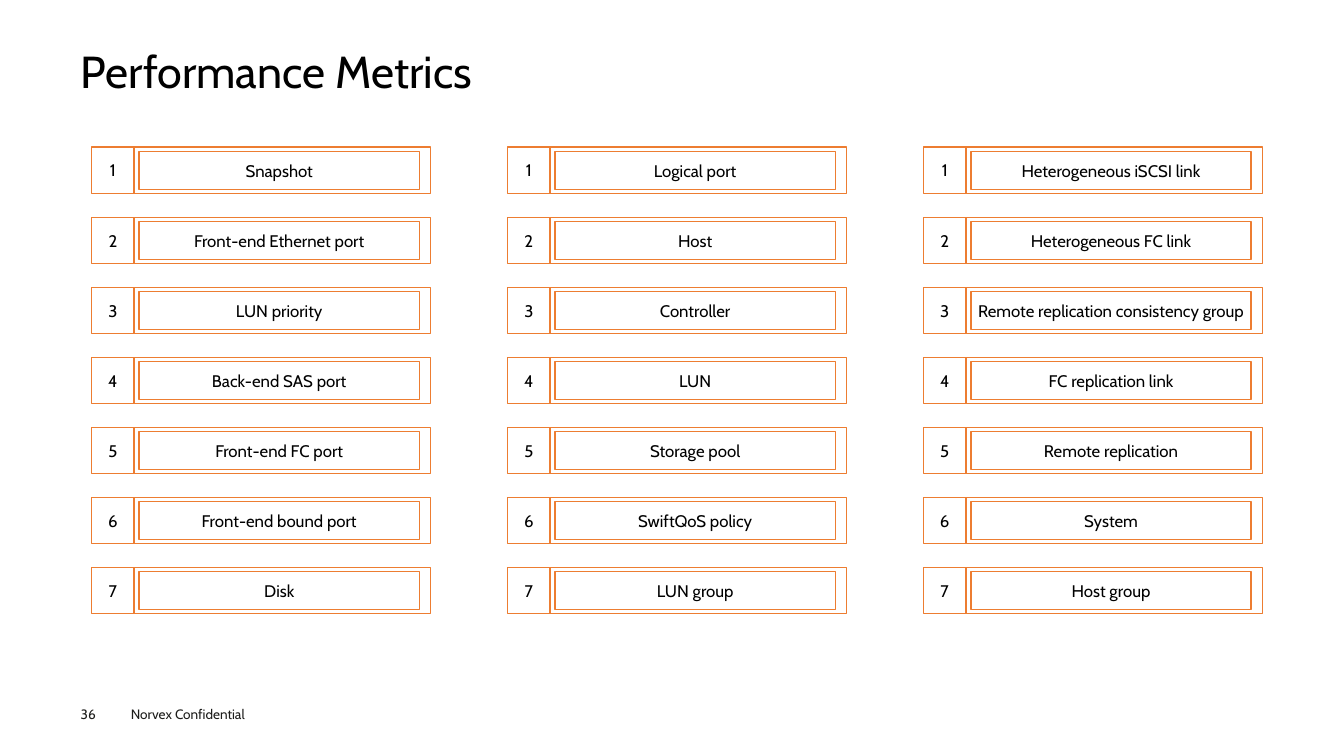
from dataclasses import dataclass

from pptx import Presentation
from pptx import util as u
from pptx.dml import color
from pptx.enum import shapes, text
from pptx.shapes import autoshape, shapetree
from pptx.slide import Slide
from pptx.text import text as text_parts


@dataclass(frozen=True)
class Theme:
    font: str = "Cabin"
    ink: str = "000000"
    footer_ink: str = "1D1D1B"
    surface: str = "FFFFFF"
    accent: str = "ED7D31"
    title_size: float = 32
    metric_size: float = 12
    footer_size: float = 9.7
    line_width: float = 1


@dataclass(frozen=True)
class Box:
    left: float
    top: float
    width: float
    height: float

    def lengths(self) -> tuple[u.Length, ...]:
        return tuple(u.Inches(value) for value in (self.left, self.top, self.width, self.height))


@dataclass(frozen=True)
class Metric:
    name: str
    side_inset: float = 0.1


@dataclass(frozen=True)
class Caption:
    words: str
    box: Box
    size: float
    ink: str
    side_inset: float = 0
    top_inset: float = 0
    line_spacing: float = 1.0


THEME = Theme()

METRIC_COLUMNS: list[list[Metric]] = [
    [
        Metric("Snapshot"),
        Metric("Front-end Ethernet port"),
        Metric("LUN priority"),
        Metric("Back-end SAS port"),
        Metric("Front-end FC port"),
        Metric("Front-end bound port"),
        Metric("Disk"),
    ],
    [
        Metric("Logical port"),
        Metric("Host"),
        Metric("Controller"),
        Metric("LUN"),
        Metric("Storage pool"),
        Metric("SwiftQoS policy"),
        Metric("LUN group"),
    ],
    [
        Metric("Heterogeneous iSCSI link"),
        Metric("Heterogeneous FC link"),
        Metric("Remote replication consistency group", side_inset=0),
        Metric("FC replication link"),
        Metric("Remote replication"),
        Metric("System"),
        Metric("Host group"),
    ],
]

CAPTIONS: list[Caption] = [
    Caption("Norvex Confidential", Box(1.2, 6.95, 1.6, 0.27), THEME.footer_size,
            THEME.footer_ink, side_inset=0.1, top_inset=0.05),
    Caption("36", Box(0.8, 7, 0.55, 0.16), THEME.footer_size, THEME.footer_ink),
    Caption("Performance Metrics", Box(0.8, 0.49, 11.73, 0.54), THEME.title_size,
            THEME.ink, line_spacing=0.9),
]

FIRST_LEFT, LAST_LEFT = 0.91, 9.16
FIRST_TOP, LAST_TOP = 1.46, 5.63
COLUMN_PITCH = (LAST_LEFT - FIRST_LEFT) / (len(METRIC_COLUMNS) - 1)
ROW_PITCH = (LAST_TOP - FIRST_TOP) / (len(METRIC_COLUMNS[0]) - 1)


def add_run(paragraph: text_parts._Paragraph, words: str, size: float, ink: str) -> None:
    run = paragraph.add_run()
    run.text = words
    run.font.name = THEME.font
    run.font.size = u.Pt(size)
    run.font.color.rgb = color.RGBColor.from_string(ink)


def add_caption(slide: Slide, caption: Caption) -> None:
    frame = slide.shapes.add_textbox(*caption.box.lengths()).text_frame
    frame.word_wrap = True
    frame.margin_left = frame.margin_right = u.Inches(caption.side_inset)
    frame.margin_top = frame.margin_bottom = u.Inches(caption.top_inset)
    paragraph = frame.paragraphs[0]
    paragraph.line_spacing = caption.line_spacing
    add_run(paragraph, caption.words, caption.size, caption.ink)


def add_frame(group: shapetree.GroupShapes, box: Box) -> autoshape.Shape:
    """Add an outlined rectangle without a shadow."""
    shape = group.add_shape(shapes.MSO_SHAPE.RECTANGLE, *box.lengths())
    shape.shadow.inherit = False
    shape.fill.solid()
    shape.fill.fore_color.rgb = color.RGBColor.from_string(THEME.surface)
    shape.line.color.rgb = color.RGBColor.from_string(THEME.accent)
    shape.line.width = u.Pt(THEME.line_width)
    return shape


def add_label(group: shapetree.GroupShapes, box: Box, words: str, side_inset: float = 0.1) -> None:
    """Add an outlined rectangle with centred text."""
    frame = add_frame(group, box).text_frame
    frame.word_wrap = True
    frame.vertical_anchor = text.MSO_ANCHOR.MIDDLE
    frame.margin_left = frame.margin_right = u.Inches(side_inset)
    paragraph = frame.paragraphs[0]
    paragraph.alignment = text.PP_ALIGN.CENTER
    add_run(paragraph, words, THEME.metric_size, THEME.ink)


def add_metric(slide: Slide, metric: Metric, number: int, left: float, top: float) -> None:
    """Add one row: the outer bar, its number and its name."""
    group = slide.shapes.add_group_shape().shapes
    add_frame(group, Box(left + 0.37, top, 2.99, 0.46))
    add_label(group, Box(left, top, 0.42, 0.46), str(number))
    add_label(group, Box(left + 0.47, top + 0.04, 2.78, 0.38), metric.name, metric.side_inset)


def main() -> None:
    presentation = Presentation()
    presentation.slide_width = u.Inches(13.33)
    presentation.slide_height = u.Inches(7.5)
    slide = presentation.slides.add_slide(presentation.slide_layouts[6])
    for caption in CAPTIONS:
        add_caption(slide, caption)
    for column, metrics in enumerate(METRIC_COLUMNS):
        for row, metric in enumerate(metrics):
            add_metric(slide, metric, row + 1,
                       FIRST_LEFT + column * COLUMN_PITCH, FIRST_TOP + row * ROW_PITCH)
    presentation.save("out.pptx")


if __name__ == "__main__":
    main()
